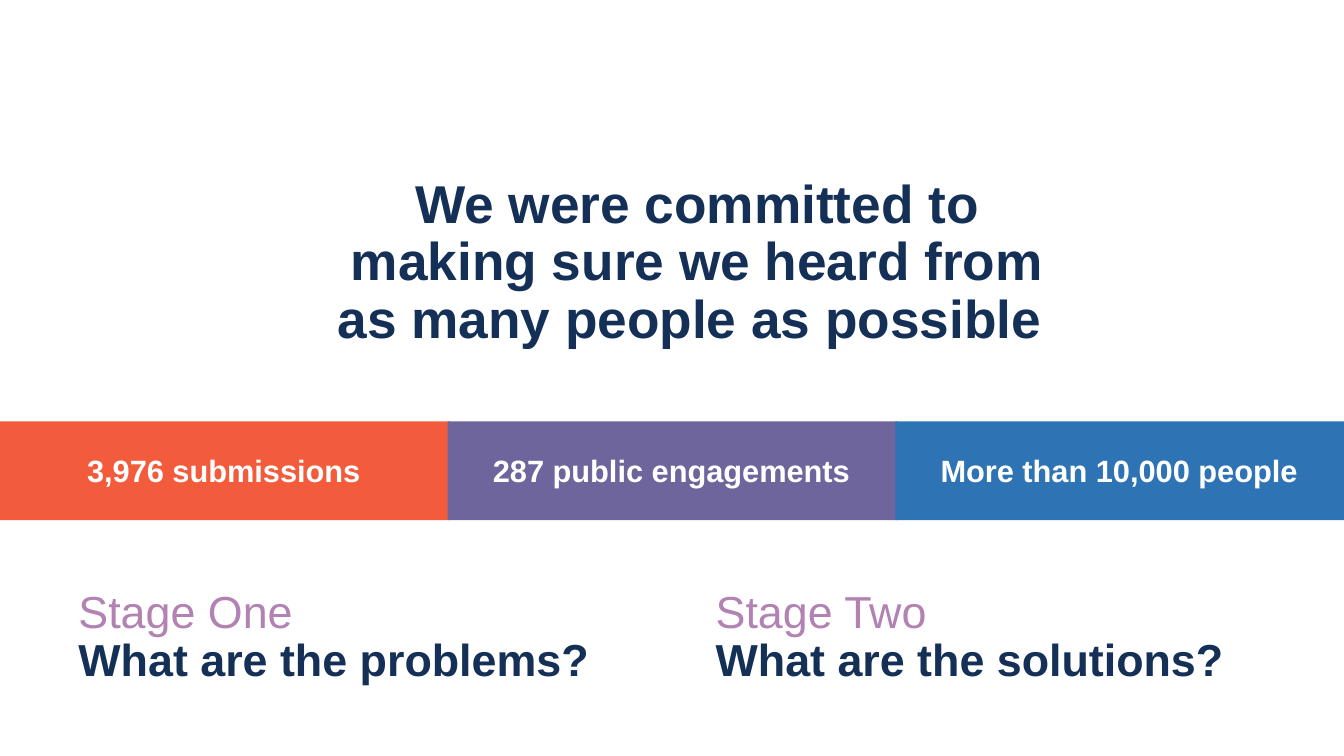
import pptx
import pptx.util
import pptx.dml.color
import pptx.enum.shapes
import pptx.enum.text

RGB = pptx.dml.color.RGBColor
ALIGN = pptx.enum.text.PP_ALIGN
ANCHOR = pptx.enum.text.MSO_ANCHOR

NAVY = RGB(0x15, 0x30, 0x57)
MAUVE = RGB(0xB2, 0x82, 0xB2)
WHITE = RGB(0xFF, 0xFF, 0xFF)
ORANGE = RGB(0xF2, 0x5C, 0x3C)
PURPLE = RGB(0x6D, 0x65, 0x9B)
BLUE = RGB(0x2E, 0x74, 0xB5)


def px(count):
    return pptx.util.Emu(count * 9144)


class Page:
    face = "Arial"
    space = 0.9

    def __init__(self, slide):
        self.slide = slide

    def fill_text(self, shape, lines, size, align, anchor):
        frame = shape.text_frame
        layout = {"word_wrap": True, "vertical_anchor": anchor,
                  "auto_size": pptx.enum.text.MSO_AUTO_SIZE.NONE}
        for name, value in layout.items():
            setattr(frame, name, value)
        for index, (text, color, bold) in enumerate(lines):
            para = frame.add_paragraph() if index else frame.paragraphs[0]
            style = {"alignment": align, "line_spacing": self.space,
                     "space_before": pptx.util.Pt(0)}
            for name, value in style.items():
                setattr(para, name, value)
            run = para.add_run()
            run.text = text
            font = {"name": self.face, "size": pptx.util.Pt(size), "bold": bold}
            for name, value in font.items():
                setattr(run.font, name, value)
            run.font.color.rgb = color

    def title(self, box, text, size):
        shape = self.slide.shapes.title
        for name, value in zip(("left", "top", "width", "height"), box):
            setattr(shape, name, px(value))
        self.fill_text(shape, [(text, NAVY, True)], size, ALIGN.CENTER, ANCHOR.MIDDLE)

    def block(self, box, color):
        shape = self.slide.shapes.add_shape(
            pptx.enum.shapes.MSO_SHAPE.RECTANGLE, *map(px, box))
        shape.shadow.inherit = False
        shape.fill.solid()
        shape.fill.fore_color.rgb = color
        shape.line.fill.background()

    def text(self, box, lines, size, align=ALIGN.LEFT):
        shape = self.slide.shapes.add_textbox(*map(px, box))
        self.fill_text(shape, lines, size, align, ANCHOR.TOP)


def main():
    deck = pptx.Presentation()
    deck.slide_width, deck.slide_height = px(1333), px(750)
    page = Page(deck.slides.add_slide(deck.slide_layouts[5]))

    page.title((311, 170, 761, 183),
               "We were committed to making sure we heard from "
               "as many people as possible ", 38)

    facts = [("3,976 submissions", ORANGE),
             ("287 public engagements", PURPLE),
             ("More than 10,000 people", BLUE)]
    pitch = 444
    for index, (text, color) in enumerate(facts):
        page.block((index * pitch, 418, 446, 98), color)
    for index, (text, color) in enumerate(facts):
        page.text((index * pitch, 447, pitch, 59), [(text, WHITE, True)], 22,
                  ALIGN.CENTER)

    stages = [(68, 599, "Stage One", "What are the problems?"),
              (700, 547, "Stage Two", "What are the solutions?")]
    for left, width, stage, quest in stages:
        page.text((left, 580, width, 107),
                  [(stage, MAUVE, False), (quest, NAVY, True)], 32)

    deck.save("out.pptx")


if __name__ == "__main__":
    main()
